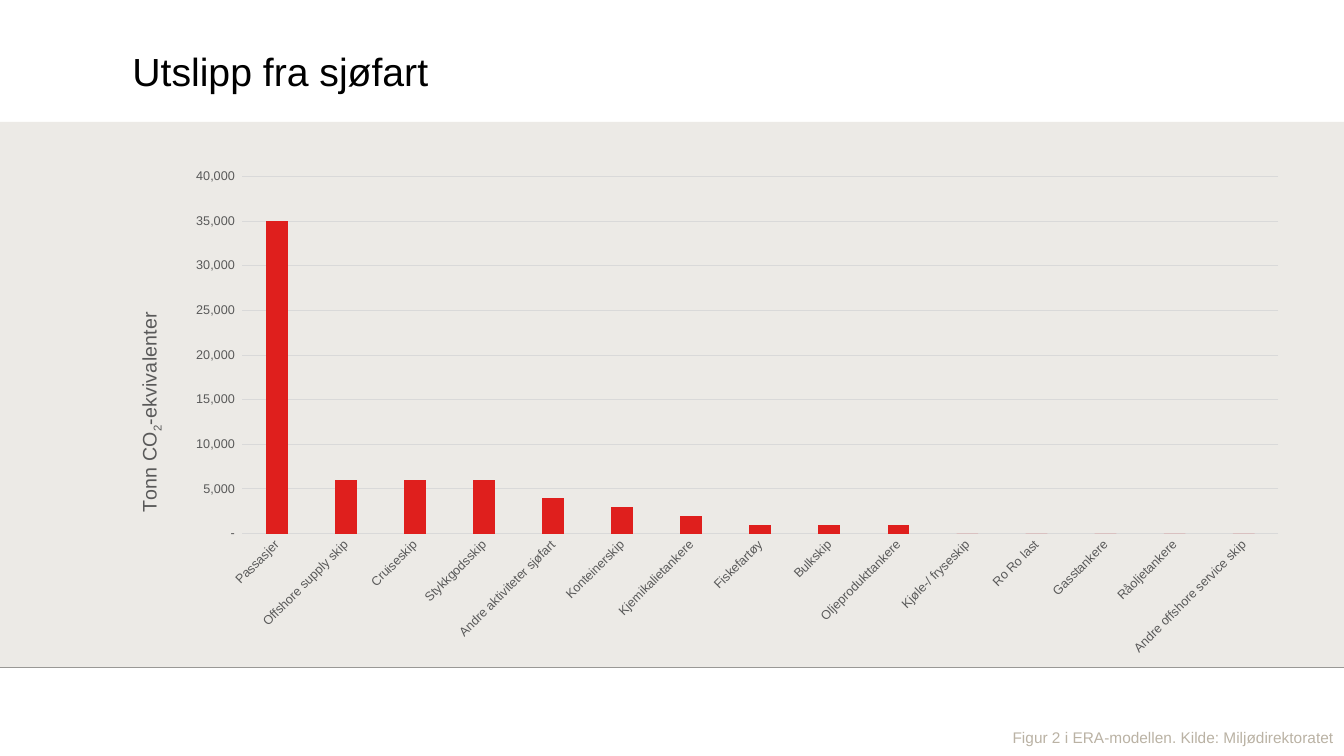
from lxml import etree
from pptx import Presentation
from pptx.chart import data as cd
from pptx.dml.color import RGBColor
from pptx.enum import chart as ch, shapes as sh, text as tx
from pptx.oxml import ns
from pptx.util import Pt

FONT, GREY, PALE = "Arial", "595959", "D9D9D9"
WIDE, HIGH = 960, 540
BAND = (87.1, 476.9)  # top and bottom of the grey band
SHIPS = {
    "Passasjer": 35000,
    "Offshore supply skip": 6000,
    "Cruiseskip": 6000,
    "Stykkgodsskip": 6000,
    "Andre aktiviteter sjøfart": 4000,
    "Konteinerskip": 3000,
    "Kjemikalietankere": 2000,
    "Fiskefartøy": 1000,
    "Bulkskip": 1000,
    "Oljeprodukttankere": 1000,
    "Kjøle-/ fryseskip": 0,
    "Ro Ro last": 0,
    "Gasstankere": 0,
    "Råoljetankere": 0,
    "Andre offshore service skip": 0,
}
# Inner plot area as shares of the chart
PLOT = {"x": 0.106, "y": 0.034, "w": 0.874, "h": 0.706}


def rgb(code):
    return RGBColor.from_string(code)


def put(item, **vals):
    for name, val in vals.items():
        setattr(item, name, val)


def style(font, size, color):
    put(font, name=FONT, size=Pt(size), bold=False)
    font.color.rgb = rgb(color)


def stroke(line, color):
    line.color.rgb = rgb(color)
    line.width = Pt(0.75)


def add_rule(slide, y):
    rule = slide.shapes.add_connector(
        sh.MSO_CONNECTOR.STRAIGHT, 0, Pt(y), Pt(WIDE), Pt(y))
    stroke(rule.line, "000000")
    etree.SubElement(rule._element.spPr, ns.qn("a:effectLst"))


def add_band(slide, top, bottom, color):
    band = slide.shapes.add_shape(
        sh.MSO_SHAPE.RECTANGLE, 0, Pt(top), Pt(WIDE), Pt(bottom - top))
    band.shadow.inherit = False
    band.fill.solid()
    band.fill.fore_color.rgb = rgb(color)
    band.line.fill.background()


def add_label(slide, box, words, size, color, **frame):
    label = slide.shapes.add_textbox(*map(Pt, box)).text_frame
    put(label, word_wrap=True, **frame)
    run = label.paragraphs[0].add_run()
    run.text = words
    style(run.font, size, color)


def set_plot(chart):
    area = chart._chartSpace.chart.plotArea
    for old in area.findall(ns.qn("c:layout")):
        area.remove(old)
    layout = etree.Element(ns.qn("c:layout"))
    area.insert(0, layout)
    manual = etree.SubElement(layout, ns.qn("c:manualLayout"))
    parts = {"layoutTarget": "inner", "xMode": "edge", "yMode": "edge", **PLOT}
    for tag, val in parts.items():
        etree.SubElement(manual, ns.qn("c:" + tag)).set("val", str(val))


def set_axis(axis):
    put(axis, major_tick_mark=ch.XL_TICK_MARK.NONE,
        minor_tick_mark=ch.XL_TICK_MARK.NONE)
    style(axis.tick_labels.font, 9, GREY)


def name_axis(axis):
    frame = axis.axis_title.text_frame
    frame._txBody.bodyPr.set("rot", "-5400000")
    para = frame.paragraphs[0]
    for words, shift in (("Tonn CO", 0), ("2", -25000), ("-ekvivalenter", 0)):
        run = para.add_run()
        run.text = words
        style(run.font, 14, GREY)
        if shift:
            run.font._element.set("baseline", str(shift))


def add_bars(slide, box):
    data = cd.CategoryChartData()
    data.categories = list(SHIPS)
    data.add_series("Series 1", list(SHIPS.values()))
    chart = slide.shapes.add_chart(
        ch.XL_CHART_TYPE.COLUMN_CLUSTERED, *map(Pt, box), data).chart
    put(chart, has_legend=False, has_title=False)
    style(chart.font, 10, "000000")

    # Columns
    plot = chart.plots[0]
    put(plot, gap_width=219, overlap=-27, vary_by_categories=False)
    fill = plot.series[0].format.fill
    fill.solid()
    fill.fore_color.rgb = rgb("DF1F1D")

    # Axes
    cat, val = chart.category_axis, chart.value_axis
    for axis in (cat, val):
        set_axis(axis)
    stroke(cat.format.line, PALE)
    cat._element.txPr.bodyPr.set("rot", "-2700000")
    put(val, minimum_scale=0, maximum_scale=40000, major_unit=5000)
    val.format.line.fill.background()
    stroke(val.major_gridlines.format.line, PALE)
    put(val.tick_labels, number_format_is_linked=False,
        number_format='_(* #,##0_);_(* \\(#,##0\\);_(* "-"_);_(@_)')
    name_axis(val)
    set_plot(chart)


def main():
    deck = Presentation()
    put(deck, slide_width=Pt(WIDE), slide_height=Pt(HIGH))
    slide = deck.slides.add_slide(deck.slide_layouts[6])

    # Background
    add_rule(slide, 476.6)
    add_band(slide, *BAND, "ECEAE6")

    # Title and source
    add_label(slide, (94.6, 23.4, 799.2, 54), "Utslipp fra sjøfart",
              28, "000000", vertical_anchor=tx.MSO_ANCHOR.MIDDLE,
              margin_left=0, margin_right=0, margin_top=0, margin_bottom=0)
    add_label(slide, (716.2, 516.6, 243.8, 20.9),
              "Figur 2 i ERA-modellen. Kilde: Miljødirektoratet", 11, "BAB2A4",
              margin_right=0, auto_size=tx.MSO_AUTO_SIZE.SHAPE_TO_FIT_TEXT)

    # Emissions by ship type
    add_bars(slide, (83.3, 113.8, 846.7, 361.4))
    deck.save("out.pptx")


if __name__ == "__main__":
    main()
